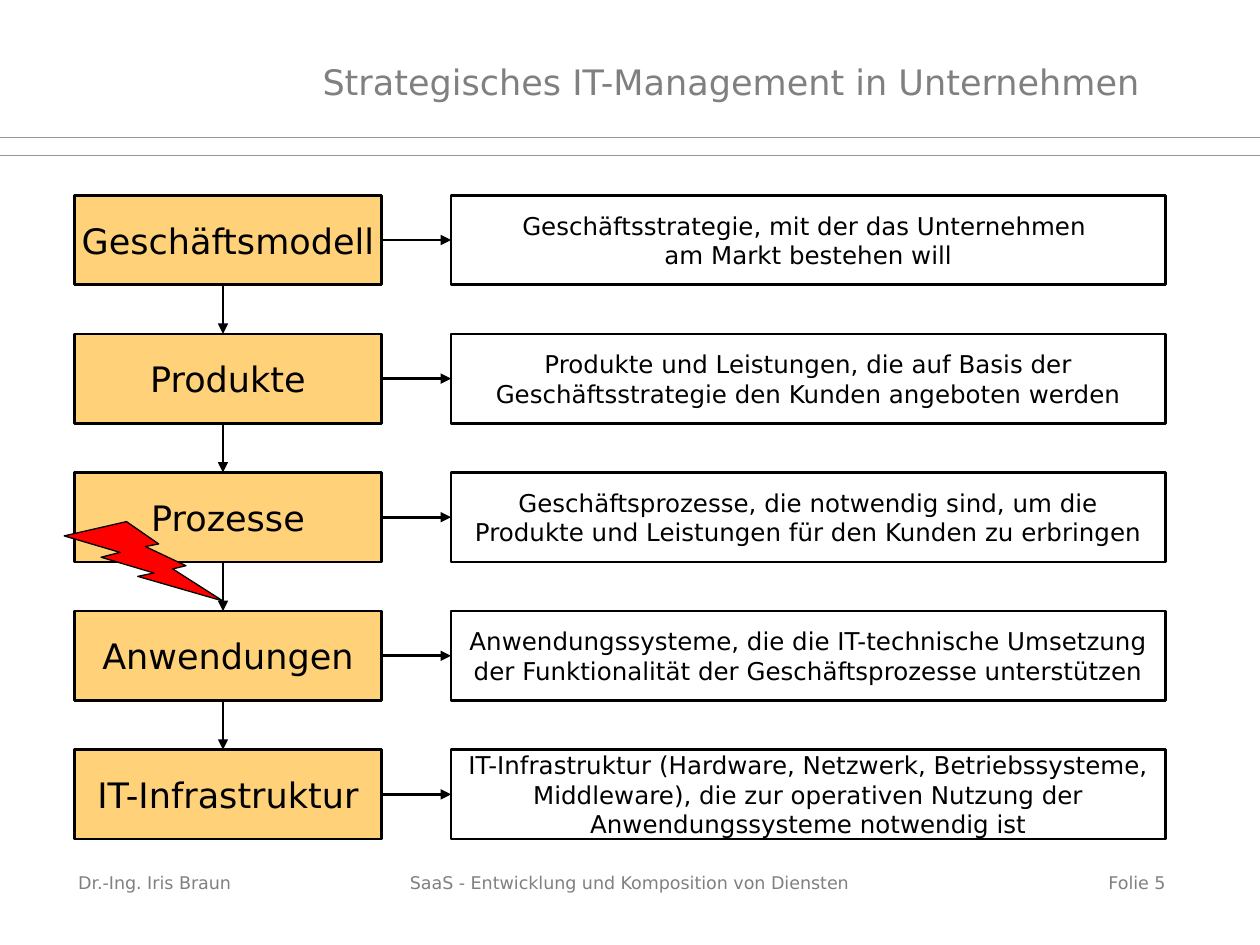
"""Build a slide on strategic IT management in companies."""
from dataclasses import dataclass

from lxml.etree import SubElement
from pptx import Presentation
from pptx.dml.color import RGBColor
from pptx.enum.shapes import MSO_CONNECTOR, MSO_SHAPE
from pptx.enum.text import MSO_ANCHOR, PP_ALIGN
from pptx.oxml.ns import qn
from pptx.util import Inches, Pt


@dataclass(frozen=True)
class Theme:
    """Hold the colours, type sizes and line widths."""
    font: str = "DejaVu Sans"
    black: str = "000000"
    grey: str = "808080"
    rule: str = "969696"
    amber: str = "FFD279"
    red: str = "FF0000"
    large: int = 20
    body: int = 14
    small: int = 10
    thick: float = 1.5
    thin: float = 0.75
    hair: float = 0.5


THEME = Theme()
TOP, PITCH, HEIGHT = 1.55, 1.1, 0.71
LEFT, WIDTH = 0.59, 2.44
NOTE_LEFT, NOTE_WIDTH = 3.58, 5.67
ARROW_X = 1.77
LEVELS = [
    ("Geschäftsmodell",
     "Geschäftsstrategie, mit der das Unternehmen \vam Markt bestehen will"),
    ("Produkte",
     "Produkte und Leistungen, die auf Basis der Geschäftsstrategie "
     "den Kunden angeboten werden"),
    ("Prozesse",
     "Geschäftsprozesse, die notwendig sind, um die Produkte und "
     "Leistungen für den Kunden zu erbringen"),
    ("Anwendungen",
     "Anwendungssysteme, die die IT-technische Umsetzung der "
     "Funktionalität der Geschäftsprozesse unterstützen"),
    ("IT-Infrastruktur",
     "IT-Infrastruktur (Hardware, Netzwerk, Betriebssysteme, Middleware), "
     "die zur operativen Nutzung der Anwendungssysteme notwendig ist"),
]
FOOTER = [
    ("Dr.-Ing. Iris Braun", 0.62, 2.25, PP_ALIGN.LEFT),
    ("SaaS - Entwicklung und Komposition von Diensten", 3.08, 3.83,
     PP_ALIGN.CENTER),
    ("Folie 5", 7.17, 2.08, PP_ALIGN.RIGHT),
]


def write(shape, text, size, color=THEME.black, align=PP_ALIGN.CENTER,
          anchor=MSO_ANCHOR.MIDDLE, wrap=True, inset=(0.1, 0.05, 0.1, 0.05)):
    """Put formatted text into a shape."""
    frame = shape.text_frame
    frame.word_wrap = wrap
    frame.vertical_anchor = anchor
    (frame.margin_left, frame.margin_top,
     frame.margin_right, frame.margin_bottom) = map(Inches, inset)
    frame.text = text
    para = frame.paragraphs[0]
    para.alignment = align
    for run in para.runs:
        run.font.name = THEME.font
        run.font.size = Pt(size)
        run.font.color.rgb = RGBColor.from_string(color)


def add_label(slide, text, place, size, **style):
    """Add a grey text box."""
    label = slide.shapes.add_textbox(*map(Inches, place))
    write(label, text, size, THEME.grey, **style)


def add_form(slide, kind, place, fill=None, width=THEME.thick):
    """Add an outlined preset shape, filled if a colour is given."""
    form = slide.shapes.add_shape(kind, *map(Inches, place))
    form.shadow.inherit = False
    if fill:
        form.fill.solid()
        form.fill.fore_color.rgb = RGBColor.from_string(fill)
    else:
        form.fill.background()
    form.line.color.rgb = RGBColor.from_string(THEME.black)
    form.line.width = Pt(width)
    return form


def add_line(slide, start, end, color, width):
    """Add a straight line without a shadow."""
    line = slide.shapes.add_connector(
        MSO_CONNECTOR.STRAIGHT, *map(Inches, start + end))
    line.line.color.rgb = RGBColor.from_string(color)
    line.line.width = Pt(width)
    SubElement(line._element.spPr, qn("a:effectLst"))
    return line


def add_arrow(slide, start, end):
    """Add a line with an arrowhead at its end."""
    arrow = add_line(slide, start, end, THEME.black, THEME.thick)
    SubElement(arrow.line._get_or_add_ln(), qn("a:tailEnd"), type="triangle")
    return arrow


def add_level(slide, top, name, note):
    """Add a named level, its note and the arrow between them."""
    box = add_form(slide, MSO_SHAPE.RECTANGLE, (LEFT, top, WIDTH, HEIGHT),
                   THEME.amber)
    write(box, name, THEME.large, wrap=False)
    side = add_form(slide, MSO_SHAPE.RECTANGLE,
                    (NOTE_LEFT, top, NOTE_WIDTH, HEIGHT))
    write(side, note, THEME.body)
    mid = top + HEIGHT / 2
    arrow = add_arrow(slide, (LEFT + WIDTH, mid), (NOTE_LEFT, mid))
    arrow.begin_connect(box, 3)
    arrow.end_connect(side, 1)


def main():
    """Build and save the slide."""
    deck = Presentation()
    deck.slide_width, deck.slide_height = Inches(10), Inches(7.5)
    slide = deck.slides.add_slide(deck.slide_layouts[6])
    for y in (1.09, 1.23):
        add_line(slide, (0, y), (10, y), THEME.rule, THEME.hair)
    add_label(slide, "Strategisches IT-Management in Unternehmen",
              (2.56, 0.44, 6.71, 0.42), THEME.large, align=PP_ALIGN.LEFT,
              inset=(0, 0.05, 0.1, 0.05))
    for row, (name, note) in enumerate(LEVELS):
        top = TOP + row * PITCH
        add_level(slide, top, name, note)
        if row:
            add_arrow(slide, (ARROW_X, top - PITCH + HEIGHT), (ARROW_X, top))
    add_form(slide, MSO_SHAPE.LIGHTNING_BOLT, (0.51, 4.14, 1.26, 0.63),
             THEME.red, THEME.thin)
    for text, left, width, align in FOOTER:
        add_label(slide, text, (left, 6.92, width, 0.29), THEME.small,
                  align=align, anchor=MSO_ANCHOR.TOP, inset=(0, 0, 0, 0))
    deck.save("out.pptx")


if __name__ == "__main__":
    main()
